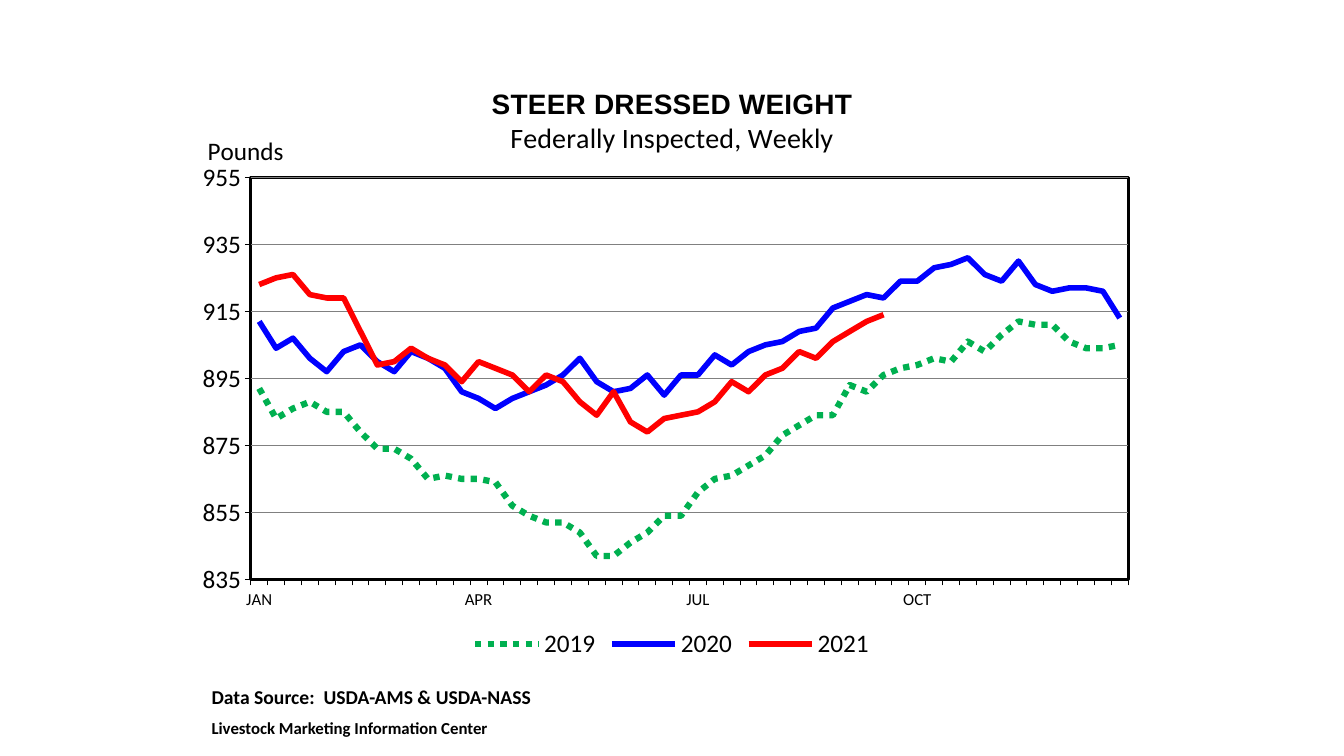
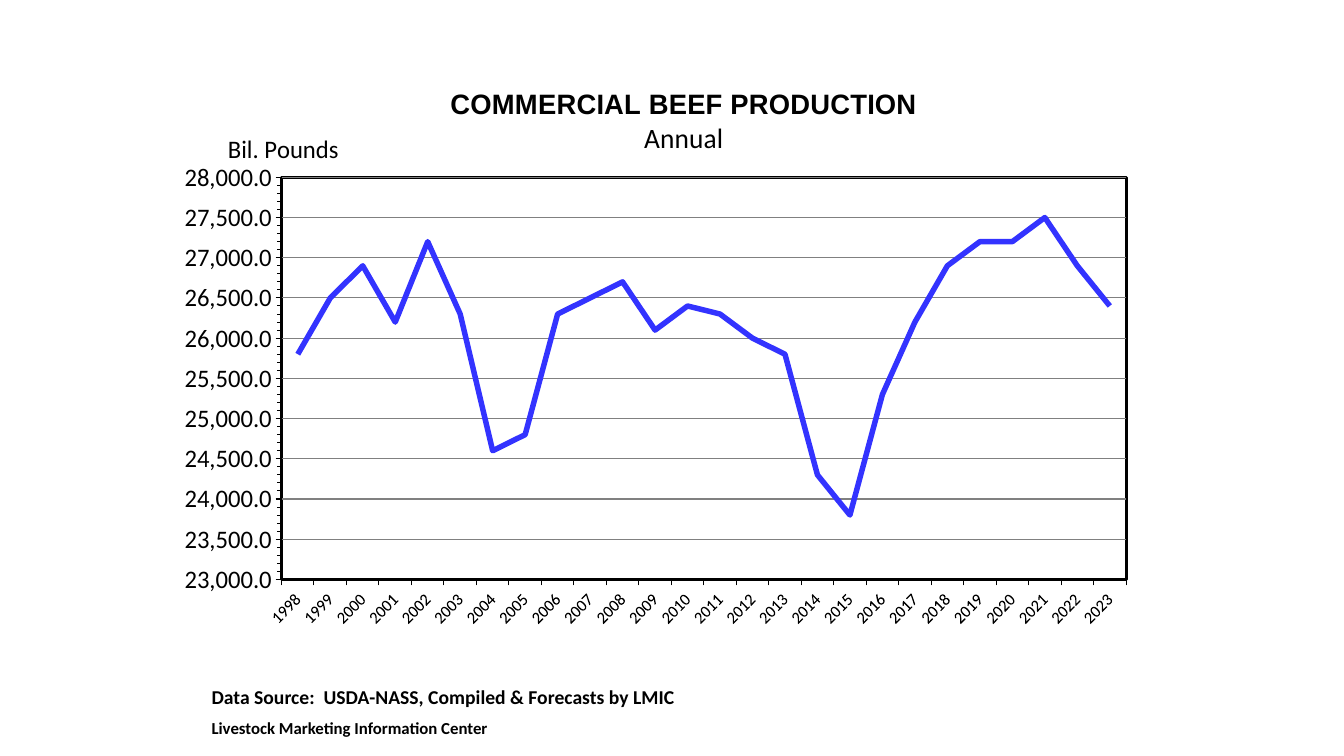
"""Build two livestock market line-chart slides."""
from dataclasses import dataclass

from pptx import Presentation
from pptx.chart.data import CategoryChartData
from pptx.dml.color import RGBColor
from pptx.enum.chart import XL_CHART_TYPE as ChartType
from pptx.enum.chart import XL_LEGEND_POSITION as LegendPosition
from pptx.enum.chart import XL_TICK_LABEL_POSITION as LabelPosition
from pptx.enum.chart import XL_TICK_MARK as TickMark
from pptx.enum.dml import MSO_LINE as LineStyle
from pptx.oxml import parse_xml
from pptx.oxml.ns import nsdecls, qn
from pptx.util import Inches, Pt

COLORS = {
    "black": "000000",
    "white": "FFFFFF",
    "grid": "808080",
    "green": "00B050",
    "blue": "0000FF",
    "red": "FF0000",
    "violet": "3333FF",
}
BODY_FONT = "Calibri"
TITLE_FONT = "Arial"
WEEKS = 52
WEEKS_PER_QUARTER = 13
QUARTERS = ("JAN", "APR", "JUL", "OCT")


@dataclass(frozen=True)
class Line:
    name: str
    values: list[int]
    color: str
    width: float = 4
    dotted: bool = False


@dataclass(frozen=True)
class Scale:
    low: int
    high: int
    major: int
    number_format: str
    minor: int | None = None


@dataclass(frozen=True)
class ChartPage:
    title: str
    subtitle: str
    unit: str
    source: str
    source_width: float
    categories: list[str]
    lines: list[Line]
    scale: Scale
    plot: tuple[float, float, float, float]
    title_at: tuple[float, float]
    unit_at: tuple[float, float]
    label_angle: int = 0


PAGES = [
    ChartPage(
        title="STEER DRESSED WEIGHT",
        subtitle="Federally Inspected, Weekly",
        unit="Pounds",
        source="Data Source:  USDA-AMS & USDA-NASS",
        source_width=4.5,
        categories=[
            "" if week % WEEKS_PER_QUARTER else QUARTERS[week // WEEKS_PER_QUARTER]
            for week in range(WEEKS)
        ],
        lines=[
            Line("2019", [
                892, 883, 886, 888, 885, 885, 879, 874, 874, 871, 865, 866, 865,
                865, 864, 857, 854, 852, 852, 849, 842, 842, 846, 849, 854, 854,
                861, 865, 866, 869, 872, 878, 881, 884, 884, 893, 891, 896, 898,
                899, 901, 900, 906, 903, 908, 912, 911, 911, 906, 904, 904, 905,
            ], "green", 4.5, True),
            Line("2020", [
                912, 904, 907, 901, 897, 903, 905, 900, 897, 903, 901, 898, 891,
                889, 886, 889, 891, 893, 896, 901, 894, 891, 892, 896, 890, 896,
                896, 902, 899, 903, 905, 906, 909, 910, 916, 918, 920, 919, 924,
                924, 928, 929, 931, 926, 924, 930, 923, 921, 922, 922, 921, 913,
            ], "blue"),
            Line("2021", [
                923, 925, 926, 920, 919, 919, 909, 899, 900, 904, 901, 899, 894,
                900, 898, 896, 891, 896, 894, 888, 884, 891, 882, 879, 883, 884,
                885, 888, 894, 891, 896, 898, 903, 901, 906, 909, 912, 914,
            ], "red"),
        ],
        scale=Scale(835, 955, 20, "General"),
        plot=(0.068, 0.184, 0.9, 0.674),
        title_at=(0.312, 0.028),
        unit_at=(0.019, 0.103),
    ),
    ChartPage(
        title="COMMERCIAL BEEF PRODUCTION",
        subtitle="Annual",
        unit="Bil. Pounds",
        source="Data Source:  USDA-NASS, Compiled & Forecasts by LMIC",
        source_width=5.67,
        categories=[str(year) for year in range(1998, 2024)],
        lines=[
            Line("Production", [
                25800, 26500, 26900, 26200, 27200, 26300, 24600, 24800, 26300,
                26500, 26700, 26100, 26400, 26300, 26000, 25800, 24300, 23800,
                25300, 26200, 26900, 27200, 27200, 27500, 26900, 26400,
            ], "violet"),
        ],
        scale=Scale(23000, 28000, 500, "#,##0.0", 100),
        plot=(0.079, 0.184, 0.886, 0.674),
        title_at=(0.253, 0.028),
        unit_at=(0.018, 0.099),
        label_angle=-45,
    ),
]


def color(name: str) -> RGBColor:
    """Return a palette colour."""
    return RGBColor.from_string(COLORS[name])


def style_font(font, size: float, bold: bool = False, name: str = BODY_FONT) -> None:
    """Set the size, weight, face and black colour of a font."""
    font.size, font.bold, font.name = Pt(size), bold, name
    font.color.rgb = color("black")


def add_span(para, text: str, size: float, bold: bool = False, name: str = BODY_FONT) -> None:
    """Add one styled run to a paragraph."""
    span = para.add_run()
    span.text = text
    style_font(span.font, size, bold, name)


def set_layout(parent, index: int, place: tuple[float, ...], inner: bool = False) -> None:
    """Give a chart part a manual layout in fractions of the chart."""
    for old in parent.findall(qn("c:layout")):
        parent.remove(old)
    target = '<c:layoutTarget val="inner"/>' if inner else ""
    modes = '<c:xMode val="edge"/><c:yMode val="edge"/>'
    sizes = "".join(f'<c:{key} val="{value}"/>' for key, value in zip("xywh", place))
    parent.insert(index, parse_xml(
        f'<c:layout {nsdecls("c")}><c:manualLayout>{target}{modes}{sizes}'
        "</c:manualLayout></c:layout>"
    ))


def style_axis(axis) -> None:
    """Style the line and ticks of an axis."""
    axis.major_tick_mark = TickMark.OUTSIDE
    axis.tick_label_position = LabelPosition.LOW
    axis.format.line.color.rgb = color("black")
    axis.format.line.width = Pt(0.75)


def style_category_axis(axis, angle: int) -> None:
    """Style the category axis, whose level labels inherit the chart font."""
    style_axis(axis)
    axis.has_major_gridlines = False
    if angle:
        style_font(axis.tick_labels.font, 12)
        body = axis._element.find(qn("c:txPr")).find(qn("a:bodyPr"))
        body.set("rot", str(angle * 60000))
        body.set("vert", "horz")
    else:
        for inherited in axis._element.findall(qn("c:txPr")):
            axis._element.remove(inherited)
    last = axis._element.find(qn("c:noMultiLvlLbl"))
    for tag in ("tickLblSkip", "tickMarkSkip"):
        last.addprevious(parse_xml(f'<c:{tag} {nsdecls("c")} val="1"/>'))


def style_value_axis(axis, page: ChartPage) -> None:
    """Set the scale, gridlines and unit label of the value axis."""
    style_axis(axis)
    style_font(axis.tick_labels.font, 18)
    scale = page.scale
    axis.minimum_scale, axis.maximum_scale = scale.low, scale.high
    axis.major_unit = scale.major
    if scale.minor:
        axis.minor_unit = scale.minor
        axis.minor_tick_mark = TickMark.OUTSIDE
    axis.tick_labels.number_format = scale.number_format
    axis.tick_labels.number_format_is_linked = False
    axis.has_major_gridlines = True
    axis.major_gridlines.format.line.color.rgb = color("grid")
    axis.major_gridlines.format.line.width = Pt(0.75)
    frame = axis.axis_title.text_frame
    add_span(frame.paragraphs[0], page.unit, 18)
    frame._txBody.find(qn("a:bodyPr")).set("rot", "0")
    set_layout(axis.axis_title._element, 1, page.unit_at)


def style_plot_area(chart, page: ChartPage) -> None:
    """Place the plot area and give it a white fill and black frame."""
    area = chart._chartSpace.chart.plotArea
    set_layout(area, 0, page.plot, inner=True)
    area.append(parse_xml(
        f'<c:spPr {nsdecls("c", "a")}><a:solidFill><a:srgbClr val="{COLORS["white"]}"/>'
        f'</a:solidFill><a:ln w="{Pt(2.25)}"><a:solidFill>'
        f'<a:srgbClr val="{COLORS["black"]}"/></a:solidFill></a:ln></c:spPr>'
    ))


def add_line_chart(slide, page: ChartPage) -> None:
    """Add the titled line chart of a page."""
    data = CategoryChartData()
    data.categories = page.categories
    for line in page.lines:
        missing = len(page.categories) - len(line.values)
        data.add_series(line.name, line.values + [None] * missing)
    chart = slide.shapes.add_chart(
        ChartType.LINE, Inches(1.83), Inches(0.67), Inches(9.67), Inches(5.92), data
    ).chart
    style_font(chart.font, 12)
    chart.has_title = True
    heading = chart.chart_title.text_frame
    add_span(heading.paragraphs[0], page.title, 20, True, TITLE_FONT)
    add_span(heading.add_paragraph(), page.subtitle, 20)
    set_layout(chart.chart_title._element, 1, page.title_at)
    chart.has_legend = len(page.lines) > 1
    if chart.has_legend:
        chart.legend.position = LegendPosition.BOTTOM
        chart.legend.include_in_layout = False
        style_font(chart.legend.font, 18)
    plot = chart.plots[0]
    plot.vary_by_categories = False
    for series, line in zip(plot.series, page.lines):
        series.smooth = False
        series.format.line.color.rgb = color(line.color)
        series.format.line.width = Pt(line.width)
        if line.dotted:
            series.format.line.dash_style = LineStyle.ROUND_DOT
    style_category_axis(chart.category_axis, page.label_angle)
    style_value_axis(chart.value_axis, page)
    style_plot_area(chart, page)


def add_source(slide, page: ChartPage) -> None:
    """Add the data source and publisher below the chart."""
    box = slide.shapes.add_textbox(
        Inches(2), Inches(6.75), Inches(page.source_width), Inches(0.64)
    )
    frame = box.text_frame
    frame.word_wrap = True
    add_span(frame.paragraphs[0], page.source, 14, True)
    publisher = frame.add_paragraph()
    publisher.space_before = Pt(6)
    add_span(publisher, "Livestock Marketing Information Center", 12, True)


def main() -> None:
    """Build and save the deck."""
    deck = Presentation()
    deck.slide_width, deck.slide_height = Inches(13.33), Inches(7.5)
    for page in PAGES:
        slide = deck.slides.add_slide(deck.slide_layouts[6])
        add_line_chart(slide, page)
        add_source(slide, page)
    deck.save("out.pptx")


if __name__ == "__main__":
    main()
